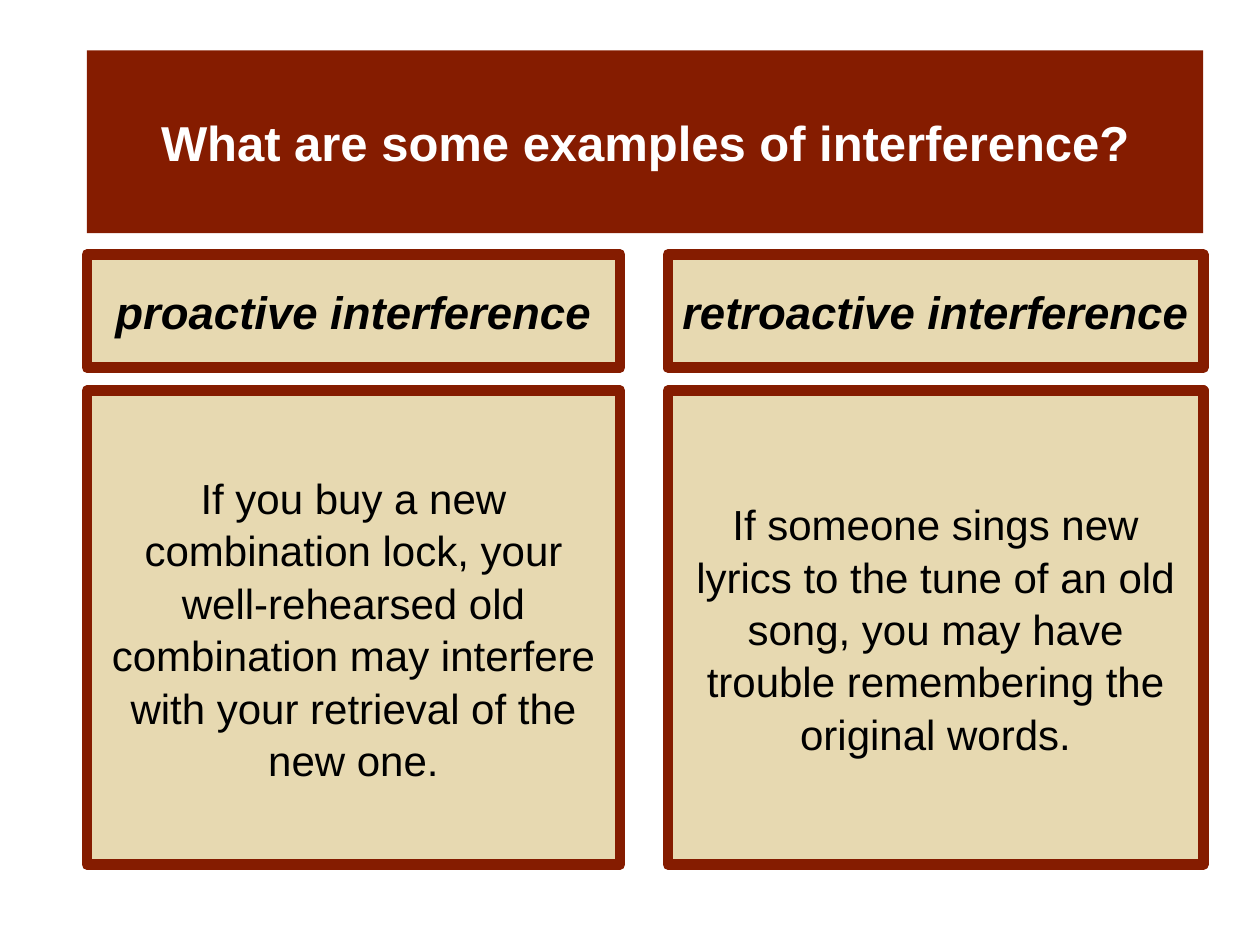
from pptx import Presentation
from pptx.dml.color import RGBColor
from pptx.enum.shapes import MSO_SHAPE
from pptx.enum.text import MSO_ANCHOR, PP_ALIGN
from pptx.util import Pt

RECTANGLE = MSO_SHAPE.RECTANGLE
MIDDLE = MSO_ANCHOR.MIDDLE
CENTER = PP_ALIGN.CENTER

COLORS = {"brick": "851C00", "sand": "E7D9B1", "white": "FFFFFF", "black": "000000"}
FONT = "Arial"

# Boxes are left, top, width, height in points
TITLE_BOX = (49.7, 28.8, 637.9, 104.4)
COLUMNS = [
    ((49.7, 145.4, 304.6, 348.7), "proactive interference",
     "If you buy a new combination lock, your well-rehearsed old combination "
     "may interfere with your retrieval of the new one."),
    ((381.6, 145.4, 306, 348.7), "retroactive interference",
     "If someone sings new lyrics to the tune of an old song, you may have "
     "trouble remembering the original words."),
]
HEADING_HEIGHT = 64.8
GAP = 13


def color(name):
    return RGBColor.from_string(COLORS[name])


def write_text(shape, text, size, ink="black", bold=False, italic=False, spacing=1.0):
    frame = shape.text_frame
    frame.word_wrap = True
    frame.vertical_anchor = MIDDLE
    para = frame.paragraphs[0]
    para.alignment = CENTER
    para.line_spacing = spacing
    span = para.add_run()
    span.text = text
    span.font.name = FONT
    span.font.size = Pt(size)
    span.font.bold = bold
    span.font.italic = italic
    span.font.color.rgb = color(ink)


def add_panel(slide, box, fill, border=None):
    shape = slide.shapes.add_shape(RECTANGLE, *(Pt(length) for length in box))
    shape.shadow.inherit = False
    shape.fill.solid()
    shape.fill.fore_color.rgb = color(fill)
    if border:
        shape.line.color.rgb = color(border)
        shape.line.width = Pt(6)
    else:
        shape.line.fill.background()
    return shape


def add_title(slide, box, text):
    banner = add_panel(slide, box, "brick")
    write_text(banner, text, size=28, ink="white", bold=True)


def add_column(slide, box, heading, example):
    left, top, width, height = box
    # Heading panel
    panel = add_panel(slide, (left, top, width, HEADING_HEIGHT), "sand", border="brick")
    write_text(panel, heading, size=26, bold=True, italic=True)
    # Example panel fills the rest of the column
    offset = HEADING_HEIGHT + GAP
    panel = add_panel(slide, (left, top + offset, width, height - offset),
                      "sand", border="brick")
    write_text(panel, example, size=24, spacing=1.04)


def main():
    deck = Presentation()
    deck.slide_width, deck.slide_height = Pt(720), Pt(540)
    slide = deck.slides.add_slide(deck.slide_layouts[6])
    add_title(slide, TITLE_BOX, "What are some examples of interference?")
    for box, heading, example in COLUMNS:
        add_column(slide, box, heading, example)
    deck.save("out.pptx")


if __name__ == "__main__":
    main()
